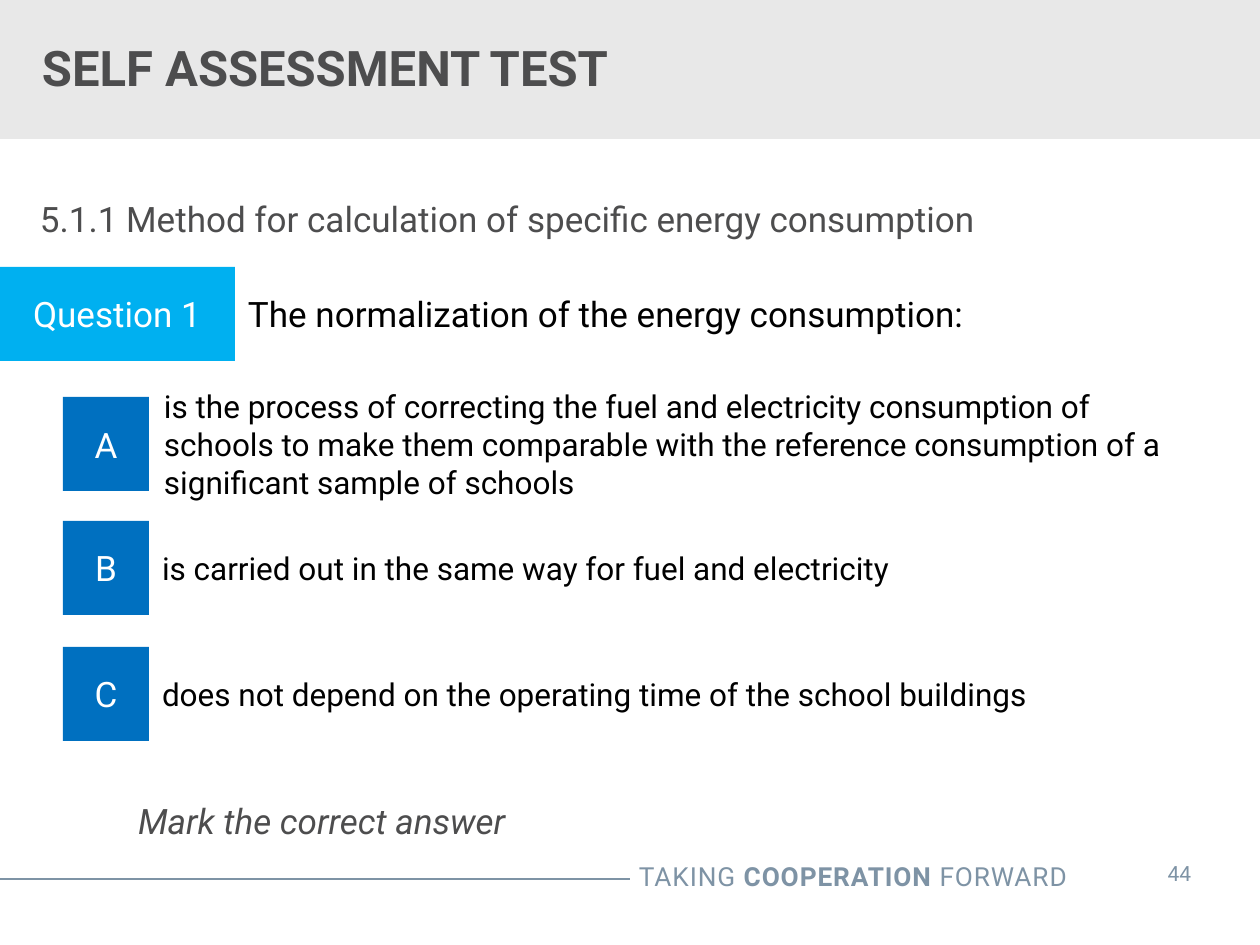
from lxml.etree import SubElement
from pptx import Presentation
from pptx.dml.color import RGBColor
from pptx.enum.shapes import MSO_CONNECTOR, MSO_SHAPE
from pptx.enum.text import MSO_ANCHOR, PP_ALIGN
from pptx.oxml.ns import qn
from pptx.util import Emu, Pt

PX = 914400 // 126
FONT = "Roboto"

WHITE = RGBColor(0xFF, 0xFF, 0xFF)
BLACK = RGBColor(0x00, 0x00, 0x00)
CHARCOAL = RGBColor(0x4D, 0x4D, 0x4E)
BAND_GREY = RGBColor(0xE8, 0xE8, 0xE8)
SLATE = RGBColor(0x7E, 0x93, 0xA5)
SKY = RGBColor(0x00, 0xB0, 0xF0)
BLUE = RGBColor(0x00, 0x70, 0xC0)

ROW_HEIGHT = 94
ANSWERS = [
    # letter, top, text left, text
    ("A", 397, 151, "is the process of correcting the fuel and electricity consumption of "
     "schools to make them comparable with the reference consumption of a "
     "significant sample of schools"),
    ("B", 521, 149, "is carried out in the same way for fuel and electricity"),
    ("C", 647, 149, "does not depend on the operating time of the school buildings"),
]


def px(*lengths):
    return [Emu(length * PX) for length in lengths]


def add_span(para, text, size=20, color=CHARCOAL, bold=False, italic=False, spacing=0):
    span = para.add_run()
    span.text = text
    font = span.font
    font.name, font.size = FONT, Pt(size)
    font.bold, font.italic = bold, italic
    font.color.rgb = color
    if spacing:
        span._r.get_or_add_rPr().set("spc", str(int(spacing * 100)))


def write(box, text, align=PP_ALIGN.LEFT, anchor=MSO_ANCHOR.MIDDLE, insets=(13, 6),
          wrap=True, **style):
    """Fill a box with text; a list holds (text, bold) parts."""
    frame = box.text_frame
    frame.word_wrap = wrap
    frame.vertical_anchor = anchor
    frame.margin_left, frame.margin_top = px(*insets)
    frame.margin_right, frame.margin_bottom = px(*insets)
    para = frame.paragraphs[0]
    para.alignment = align
    if isinstance(text, str):
        add_span(para, text, **style)
    else:
        for part, bold in text:
            add_span(para, part, bold=bold, **style)


def add_text(page, bounds, text, **style):
    write(page.shapes.add_textbox(*px(*bounds)), text, **style)


def add_block(page, bounds, fill, text=""):
    block = page.shapes.add_shape(MSO_SHAPE.RECTANGLE, *px(*bounds))
    block.shadow.inherit = False
    block.fill.solid()
    block.fill.fore_color.rgb = fill
    block.line.fill.background()
    if text:
        write(block, text, align=PP_ALIGN.CENTER, color=WHITE)


def add_rule(page, start, end):
    rule = page.shapes.add_connector(MSO_CONNECTOR.STRAIGHT, *px(*start, *end))
    rule.line.color.rgb = SLATE
    rule.line.width = Pt(0.75)
    SubElement(rule._element.spPr, qn("a:effectLst"))


def add_footer(page):
    add_rule(page, (-1, 879), (630, 879))
    add_text(page, (489, 854, 591, 44),
             [("TAKING ", False), ("COOPERATION", True), (" FORWARD", False)],
             align=PP_ALIGN.RIGHT, anchor=MSO_ANCHOR.TOP, size=15, color=SLATE, spacing=0.5)
    add_text(page, (1133, 848, 93, 50), "44", align=PP_ALIGN.CENTER, anchor=MSO_ANCHOR.TOP,
             insets=(25, 13), wrap=False, size=12, color=SLATE)


def add_answer(page, letter, top, text_left, text):
    add_block(page, (63, top, 86, ROW_HEIGHT), BLUE, letter)
    add_text(page, (text_left, top, 1027, ROW_HEIGHT), text, size=18, color=BLACK)


def main():
    deck = Presentation()
    deck.slide_width, deck.slide_height = px(1260, 945)
    page = deck.slides.add_slide(deck.slide_layouts[6])

    # Header band and footer
    add_block(page, (0, 0, 1260, 139), BAND_GREY)
    add_footer(page)

    # Title and section heading
    add_text(page, (-1, 20, 908, 94), "SELF ASSESSMENT TEST", insets=(43, 6), size=28, bold=True)
    add_text(page, (40, 197, 1180, 42), anchor=MSO_ANCHOR.TOP, insets=(0, 0),
             text="5.1.1 Method for calculation of specific energy consumption")

    # Question and its answers
    add_block(page, (-1, 267, 236, ROW_HEIGHT), SKY, "Question 1")
    add_text(page, (235, 267, 1027, ROW_HEIGHT), "The normalization of the energy consumption:",
             color=BLACK)
    for answer in ANSWERS:
        add_answer(page, *answer)

    # Instruction
    add_text(page, (138, 799, 1082, 42), "Mark the correct answer", anchor=MSO_ANCHOR.TOP,
             insets=(0, 0), italic=True)

    deck.save("out.pptx")


if __name__ == "__main__":
    main()
